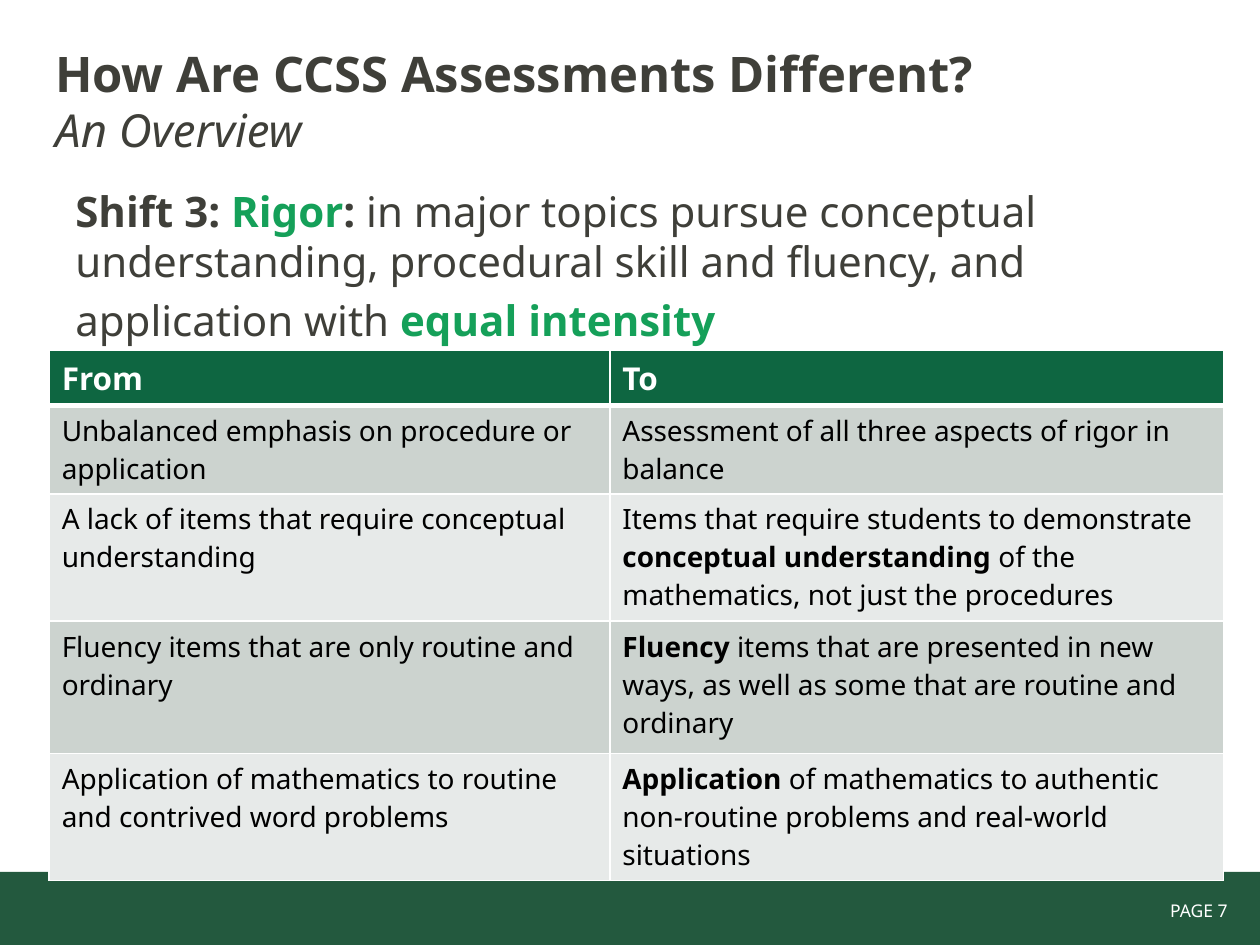
from lxml.etree import SubElement
from pptx import Presentation
from pptx.dml.color import RGBColor
from pptx.enum.shapes import MSO_SHAPE
from pptx.enum.text import MSO_ANCHOR, PP_ALIGN
from pptx.oxml.ns import qn
from pptx.util import Inches, Pt


def color(value):
    return RGBColor.from_string(value)


def write(paragraph, runs, **base):
    for text, changes in runs:
        run = paragraph.add_run()
        run.text = text
        style = {"name": "Noto Sans", **base, **changes}
        run.font.color.rgb = color(style.pop("color"))
        for attribute, value in style.items():
            setattr(run.font, attribute, value)


prs = Presentation()
prs.slide_width, prs.slide_height = Inches(10), Inches(7.5)
slide = prs.slides.add_slide(prs.slide_layouts[6])

footer = slide.shapes.add_shape(
    MSO_SHAPE.RECTANGLE, Inches(0), Inches(6.92), Inches(10.01), Inches(0.59))
footer.shadow.inherit = False
footer.fill.solid()
footer.fill.fore_color.rgb = color("23593E")
footer.line.fill.background()

DARK, GREEN = "3F3F39", "15A059"
bold = {"bold": True}
accent = {"bold": True, "color": GREEN}

text_blocks = [
    ((8.25, 7.09, 1.59, 0.27), MSO_ANCHOR.TOP,
     {"alignment": PP_ALIGN.RIGHT},
     {"size": Pt(10), "color": "FFFFFF"},
     [[("PAGE 7", {})]]),
    ((0.34, 0.17, 9, 1.25), MSO_ANCHOR.MIDDLE,
     {"line_spacing": 1.0},
     {"color": DARK},
     [[("How Are CCSS Assessments Different?", {"size": Pt(28), "bold": True})],
      [("An Overview", {"size": Pt(26), "italic": True})]]),
    ((0.5, 1.42, 9, 5.28), MSO_ANCHOR.TOP,
     {"line_spacing": 1.0, "space_before": Pt(4.8)},
     {"size": Pt(24), "color": DARK},
     [[("Shift 3: ", bold), ("Rigor", accent), (": ", bold),
       ("in major topics pursue conceptual understanding, "
        "procedural skill and fluency, and", {})],
      [("application with ", {}), ("equal intensity", accent)]]),
]
for box, anchor, paragraph_format, font, paragraphs in text_blocks:
    frame = slide.shapes.add_textbox(*map(Inches, box)).text_frame
    frame.word_wrap = True
    frame.vertical_anchor = anchor
    for index, runs in enumerate(paragraphs):
        paragraph = frame.add_paragraph() if index else frame.paragraphs[0]
        for attribute, value in paragraph_format.items():
            setattr(paragraph, attribute, value)
        write(paragraph, runs, **font)

shifts = [
    ([("From", bold)], [("To", bold)]),
    ([("Unbalanced emphasis on procedure or application", {})],
     [("Assessment of all three aspects of rigor in balance", {})]),
    ([("A lack of items that require conceptual understanding", {})],
     [("Items that require students to demonstrate ", {}),
      ("conceptual understanding", bold),
      (" of the mathematics, not just the procedures", {})]),
    ([("Fluency items that are only routine and ordinary", {})],
     [("Fluency", bold),
      (" items that are presented in new ways, as well as some that are "
       "routine and ordinary", {})]),
    ([("Application of mathematics to routine and contrived word problems", {})],
     [("Application", bold),
      (" of mathematics to authentic non-routine problems and real-world "
       "situations", {})]),
]
column_widths = [4.45, 4.87]
row_heights = [0.44, 0.7, 1.01, 1.05, 1.01]
table = slide.shapes.add_table(
    len(shifts), len(column_widths), Inches(0.39), Inches(2.78),
    Inches(sum(column_widths)), Inches(sum(row_heights))).table
for column, width in zip(table.columns, column_widths):
    column.width = Inches(width)

for row_index, (height, shift) in enumerate(zip(row_heights, shifts)):
    table.rows[row_index].height = Inches(height)
    if row_index == 0:
        fill, font = "0E6641", {"size": Pt(18), "color": "FFFFFF"}
    else:
        fill = "CCD3CF" if row_index % 2 else "E7EAE9"
        font = {"size": Pt(16), "color": "000000"}
    edges = {"a:lnL": 1, "a:lnR": 1,
             "a:lnT": 3 if row_index == 1 else 1,
             "a:lnB": 3 if row_index == 0 else 1}
    for column_index, runs in enumerate(shift):
        cell = table.cell(row_index, column_index)
        write(cell.text_frame.paragraphs[0], runs, **font)
        properties = cell._tc.get_or_add_tcPr()
        for edge, points in edges.items():
            line = SubElement(properties, qn(edge), w=str(Pt(points)))
            SubElement(SubElement(line, qn("a:solidFill")),
                       qn("a:srgbClr"), val="FFFFFF")
        cell.fill.solid()
        cell.fill.fore_color.rgb = color(fill)

prs.save("out.pptx")
